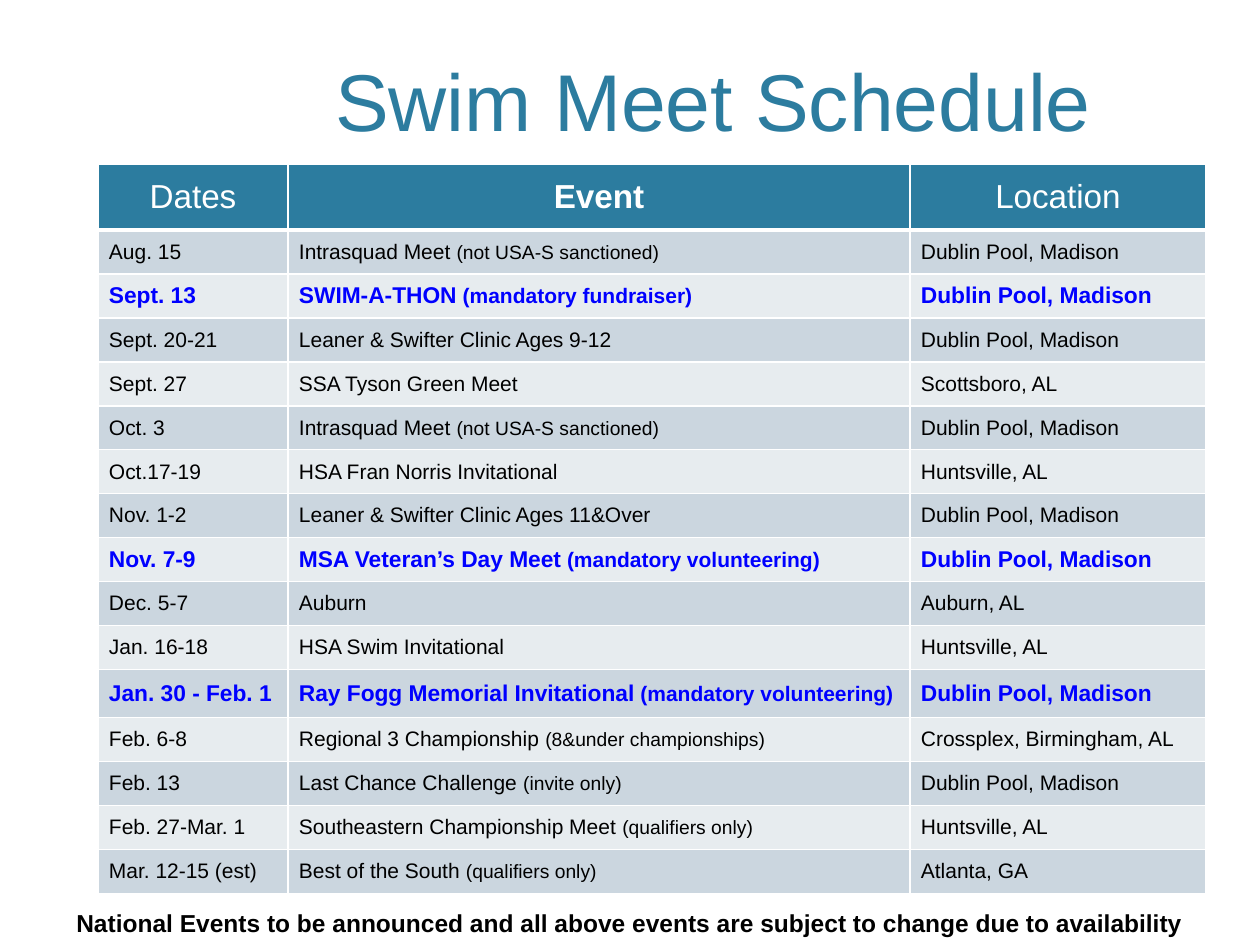
from dataclasses import dataclass
from lxml.etree import SubElement
from pptx import Presentation
from pptx.dml.color import RGBColor
from pptx.enum.text import MSO_ANCHOR, PP_ALIGN
from pptx.oxml.ns import qn
from pptx.util import Emu, Pt


@dataclass(frozen=True)
class Theme:
    font: str = "Arial"
    teal: str = "2C7C9F"
    white: str = "FFFFFF"
    black: str = "000000"
    blue: str = "0000FF"
    bands: tuple = ("CBD6DF", "E7ECEF")
    title_size: int = 46
    header_size: int = 19
    footer_size: int = 14
    mandatory_size: int = 13
    event_size: int = 12


theme = Theme()
SCALE = 914400 / 126


def px(length):
    return Emu(round(length * SCALE))


def add_run(paragraph, text, size, color, bold=False):
    run = paragraph.add_run()
    run.text = text
    run.font.name = theme.font
    run.font.size = Pt(size)
    run.font.bold = bold
    run.font.color.rgb = RGBColor.from_string(color)


HEADERS = ["Dates", "Event", "Location"]
DUBLIN = "Dublin Pool, Madison"
HUNTSVILLE = "Huntsville, AL"
MEETS = [
    ("Aug. 15", "Intrasquad Meet", "(not USA-S sanctioned)", DUBLIN),
    ("Sept. 13", "SWIM-A-THON", "(mandatory fundraiser)", DUBLIN),
    ("Sept. 20-21", "Leaner & Swifter Clinic Ages 9-12", "", DUBLIN),
    ("Sept. 27", "SSA Tyson Green Meet", "", "Scottsboro, AL"),
    ("Oct. 3", "Intrasquad Meet", "(not USA-S sanctioned)", DUBLIN),
    ("Oct.17-19", "HSA Fran Norris Invitational", "", HUNTSVILLE),
    ("Nov. 1-2", "Leaner & Swifter Clinic Ages 11&Over", "", DUBLIN),
    ("Nov. 7-9", "MSA Veteran’s Day Meet", "(mandatory volunteering)", DUBLIN),
    ("Dec. 5-7", "Auburn", "", "Auburn, AL"),
    ("Jan. 16-18", "HSA Swim Invitational", "", HUNTSVILLE),
    ("Jan. 30 - Feb. 1", "Ray Fogg Memorial Invitational", "(mandatory volunteering)", DUBLIN),
    ("Feb. 6-8", "Regional 3 Championship", "(8&under championships)", "Crossplex, Birmingham, AL"),
    ("Feb. 13", "Last Chance Challenge", "(invite only)", DUBLIN),
    ("Feb. 27-Mar. 1", "Southeastern Championship Meet", "(qualifiers only)", HUNTSVILLE),
    ("Mar. 12-15 (est)", "Best of the South", "(qualifiers only)", "Atlanta, GA"),
]
COLUMN_WIDTHS = [190, 622, 296]
ROW_HEIGHTS = [66] + [44] * len(MEETS)
ROW_HEIGHTS[11] = 48

presentation = Presentation()
presentation.slide_width = px(1260)
presentation.slide_height = px(945)
slide = presentation.slides.add_slide(presentation.slide_layouts[6])

captions = [
    ((241, 15, 944, 139), MSO_ANCHOR.BOTTOM, "Swim Meet Schedule", theme.title_size, theme.teal, False),
    ((0, 902, 1260, 43), MSO_ANCHOR.TOP,
     "National Events to be announced and all above events are subject to change due to availability",
     theme.footer_size, theme.black, True),
]
for box, anchor, text, size, color, bold in captions:
    text_frame = slide.shapes.add_textbox(*map(px, box)).text_frame
    text_frame.word_wrap = True
    text_frame.vertical_anchor = anchor
    paragraph = text_frame.paragraphs[0]
    paragraph.alignment = PP_ALIGN.CENTER
    add_run(paragraph, text, size, color, bold)

table = slide.shapes.add_table(
    len(ROW_HEIGHTS), len(COLUMN_WIDTHS), px(98), px(164), px(sum(COLUMN_WIDTHS)), px(sum(ROW_HEIGHTS))
).table
for column, width in zip(table.columns, COLUMN_WIDTHS):
    column.width = px(width)
for row, height in zip(table.rows, ROW_HEIGHTS):
    row.height = px(height)

for column_index, header in enumerate(HEADERS):
    paragraph = table.cell(0, column_index).text_frame.paragraphs[0]
    paragraph.alignment = PP_ALIGN.CENTER
    add_run(paragraph, header, theme.header_size, theme.white, header == "Event")

for row_index, (dates, event, note, location) in enumerate(MEETS, start=1):
    mandatory = note.startswith("(mandatory")
    size = theme.mandatory_size if mandatory else theme.event_size
    color = theme.blue if mandatory else theme.black
    event_text = f"{event} " if note else event
    for column_index, text in enumerate([dates, event_text, location]):
        paragraph = table.cell(row_index, column_index).text_frame.paragraphs[0]
        add_run(paragraph, text, size, color, mandatory)
        if column_index == 1 and note:
            add_run(paragraph, note, size - 1, color, mandatory)

for row_index, row in enumerate(table.rows):
    fill_color = theme.bands[(row_index - 1) % 2] if row_index else theme.teal
    for cell in row.cells:
        cell.vertical_anchor = MSO_ANCHOR.MIDDLE
        cell.margin_left = cell.margin_right = px(11)
        cell.margin_top = cell.margin_bottom = px(6)
        properties = cell._tc.get_or_add_tcPr()
        for side in ("lnL", "lnR", "lnT", "lnB"):
            heavy = (row_index, side) in ((0, "lnB"), (1, "lnT"))
            line = SubElement(properties, qn(f"a:{side}"), w=str(Pt(3 if heavy else 1)))
            line_fill = SubElement(line, qn("a:solidFill"))
            SubElement(line_fill, qn("a:srgbClr"), val=theme.white)
        cell.fill.solid()
        cell.fill.fore_color.rgb = RGBColor.from_string(fill_color)

presentation.save("out.pptx")
